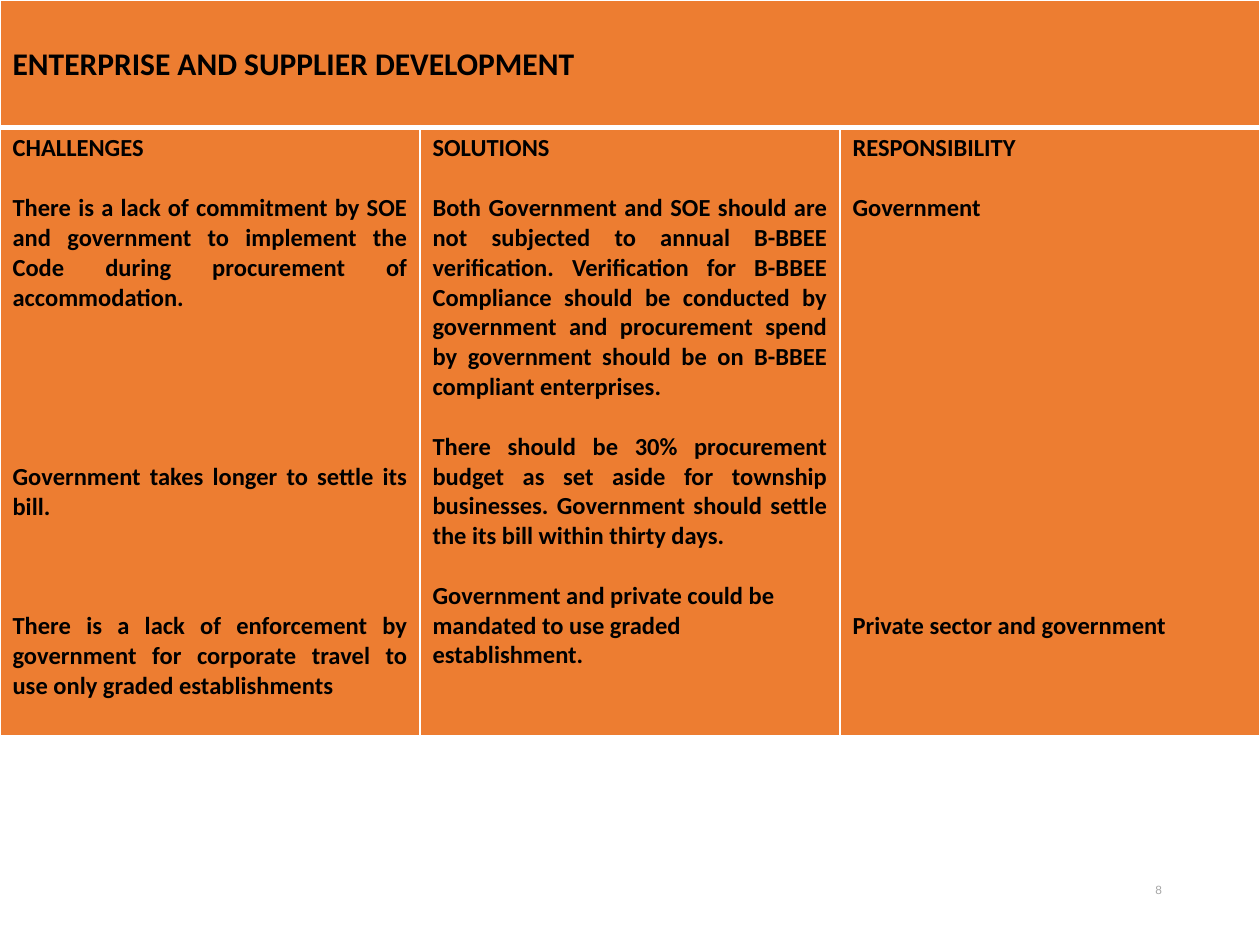
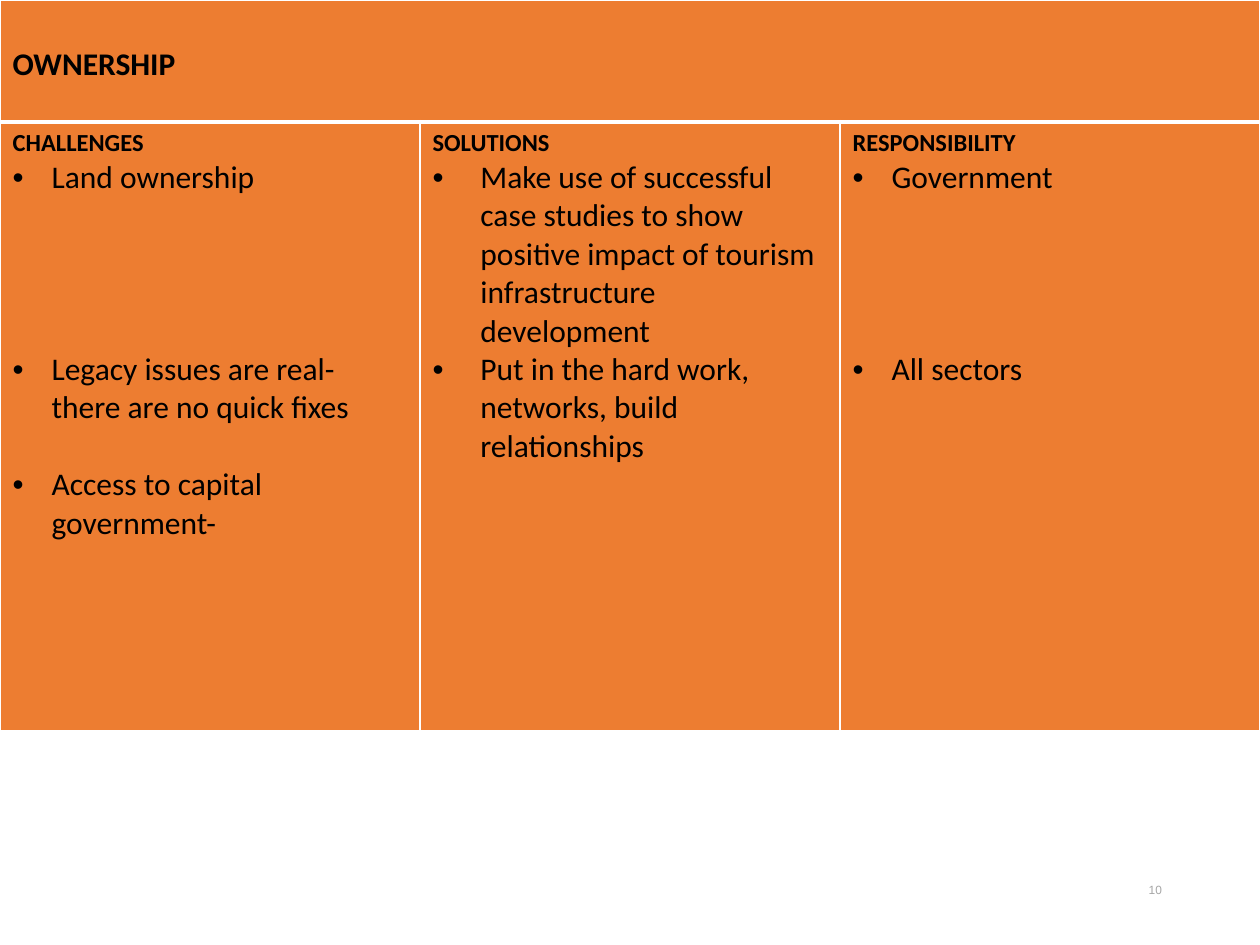
from lxml import etree
from pptx import Presentation
from pptx.dml.color import RGBColor
from pptx.enum.text import PP_ALIGN as Align
from pptx.oxml.ns import qn
from pptx.util import Inches, Pt

COLORS = {"orange": "ED7D31", "black": "000000", "white": "FFFFFF", "grey": "A6A6A6"}
FONT, NUMBER_FONT = "Calibri", "Arial"
WIDTH, HEIGHT = Inches(10), Inches(7.5)
COLUMNS = 3
BODY_HEIGHT = Inches(4.83)
LINE = 1.22  # line height as a multiple of the text size


def add_text(p, text, size=14, bold=False, color="black", font=FONT,
             align=Align.LEFT, lines_before=0, bullet_indent=None):
    """Write one formatted paragraph; lines_before is the gap above it in lines."""
    p.alignment = align
    p.space_before = Pt(round(lines_before * size * LINE, 1))
    r = p.add_run()
    r.text = text
    r.font.size, r.font.bold, r.font.name = Pt(size), bold, font
    r.font.color.rgb = RGBColor.from_string(COLORS[color])
    if bullet_indent:
        pPr = p._p.get_or_add_pPr()
        pPr.set("marL", str(Inches(bullet_indent)))
        pPr.set("indent", str(-Inches(bullet_indent)))
        etree.SubElement(pPr, qn("a:buFont")).set("typeface", "Arial")
        etree.SubElement(pPr, qn("a:buChar")).set("char", "•")


def style_cell(cell, top=1, bottom=1):
    """White borders (widths in points) and the orange fill."""
    tcPr = cell._tc.get_or_add_tcPr()
    for side, width in (("L", 1), ("R", 1), ("T", top), ("B", bottom)):
        ln = etree.SubElement(tcPr, qn(f"a:ln{side}"), w=str(Pt(width)))
        fill = etree.SubElement(ln, qn("a:solidFill"))
        etree.SubElement(fill, qn("a:srgbClr")).set("val", COLORS["white"])
    cell.fill.solid()
    cell.fill.fore_color.rgb = RGBColor.from_string(COLORS["orange"])


def add_topic_table(s, title, title_height, columns):
    """Title row across the table, then one body cell for each column."""
    title_height = Inches(title_height)
    tbl = s.shapes.add_table(2, COLUMNS, 0, 0, WIDTH, title_height + BODY_HEIGHT).table
    tbl.first_row = tbl.horz_banding = False
    tbl.rows[0].height, tbl.rows[1].height = title_height, BODY_HEIGHT
    for i in range(COLUMNS):
        tbl.columns[i].width = WIDTH // COLUMNS
        style_cell(tbl.cell(0, i), bottom=3)
        style_cell(tbl.cell(1, i), top=3)

    title_cell = tbl.cell(0, 0)
    title_cell.merge(tbl.cell(0, COLUMNS - 1))
    title_cell.margin_top = Inches(0.36)
    add_text(title_cell.text_frame.paragraphs[0], title, size=18, bold=True)

    for i, (heading, items) in enumerate(columns):
        tf = tbl.cell(1, i).text_frame
        add_text(tf.paragraphs[0], heading, bold=True)
        for text, fmt in items:
            add_text(tf.add_paragraph(), text, **fmt)


def add_page_number(s, number):
    box = s.shapes.add_textbox(WIDTH * 0.811, HEIGHT * 0.927, WIDTH * 0.121, HEIGHT * 0.053)
    tf = box.text_frame
    tf.word_wrap = True
    add_text(tf.paragraphs[0], str(number), size=6.8, color="grey",
             font=NUMBER_FONT, align=Align.RIGHT)


def strong(text, gap=1, align=Align.LEFT):
    return text, dict(bold=True, lines_before=gap, align=align)


def justified(text, gap=1):
    return strong(text, gap, Align.JUSTIFY)


def bullet(text, gap=0, indent=0.31):
    return text, dict(size=18, lines_before=gap, bullet_indent=indent)


# Page number, title, title row height, columns
TOPICS = [
    (8, "ENTERPRISE AND SUPPLIER DEVELOPMENT", 1.01, [
        ("CHALLENGES", [
            justified("There is a lack of commitment by SOE and government to implement "
                      "the Code during procurement of accommodation."),
            justified("Government takes longer to settle its bill.", gap=5),
            justified("There is a lack of enforcement by government for corporate travel "
                      "to use only graded establishments", gap=3),
        ]),
        ("SOLUTIONS", [
            justified("Both Government and SOE should are not subjected to annual B-BBEE "
                      "verification. Verification for B-BBEE Compliance should be conducted "
                      "by government and procurement spend by government should be on "
                      "B-BBEE compliant enterprises."),
            justified("There should be 30% procurement budget as set aside for township "
                      "businesses. Government should settle the its bill within thirty days."),
            strong("Government and private could be mandated to use graded establishment."),
        ]),
        ("RESPONSIBILITY", [
            strong("Government"),
            strong("Private sector and government", gap=13),
        ]),
    ]),
    (10, "OWNERSHIP", 0.97, [
        ("CHALLENGES", [
            bullet("Land ownership"),
            bullet("Legacy issues are real- there are no quick fixes", gap=4),
            bullet("Access to capital government-", gap=1),
        ]),
        ("SOLUTIONS", [
            bullet("Make use of successful case studies to show positive impact of "
                   "tourism infrastructure development", indent=0.38),
            bullet("Put in the hard work, networks, build relationships", indent=0.38),
        ]),
        ("RESPONSIBILITY", [
            bullet("Government"),
            bullet("All sectors", gap=4),
        ]),
    ]),
]


def main():
    prs = Presentation()
    prs.slide_width, prs.slide_height = WIDTH, HEIGHT
    blank = prs.slide_layouts[6]
    for number, title, title_height, columns in TOPICS:
        s = prs.slides.add_slide(blank)
        add_page_number(s, number)
        add_topic_table(s, title, title_height, columns)
    prs.save("out.pptx")


if __name__ == "__main__":
    main()
